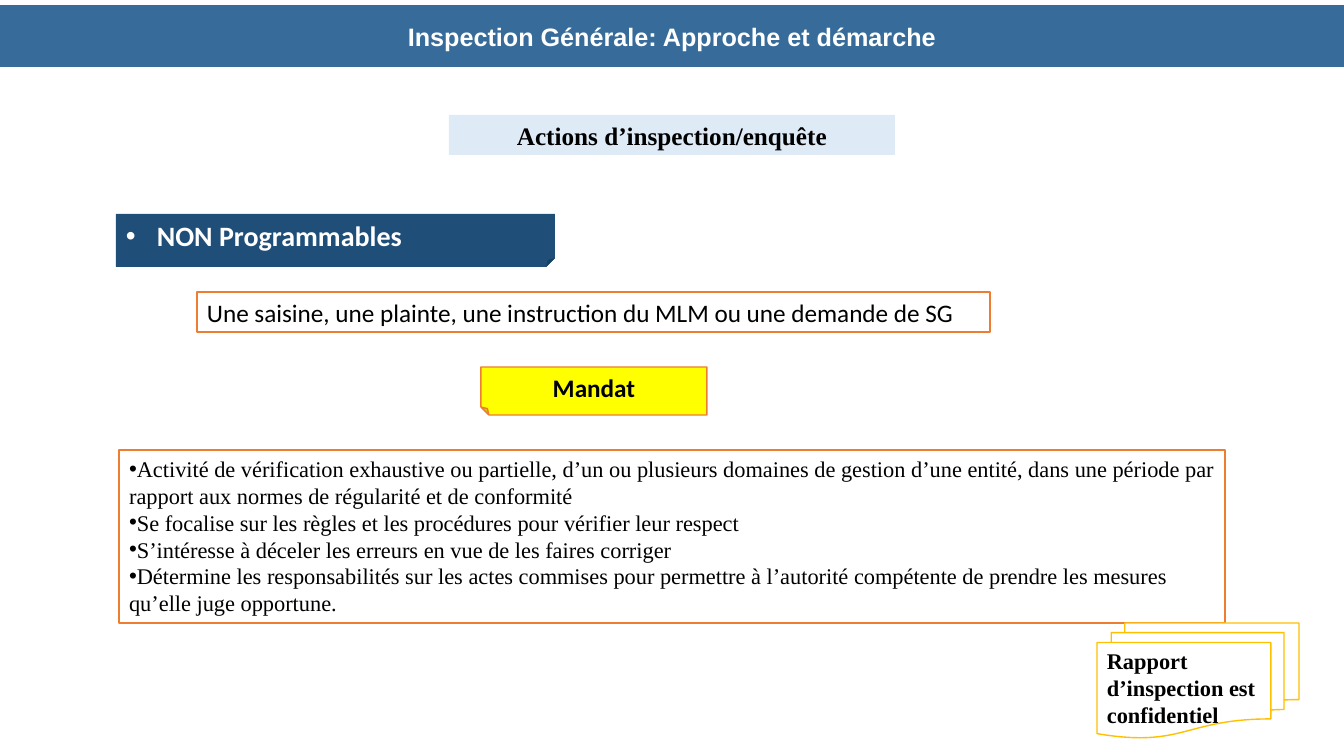
from pptx import Presentation
from pptx import util as u
from pptx.dml.color import RGBColor
from pptx.enum import shapes, text
from pptx.oxml.xmlchemy import OxmlElement

# Content: boxes are left, top, width, height in px
PX_PER_INCH = 100.8
SLIDE = (1344, 756)
SERIF, SANS = "Times New Roman", "Calibri"
BLACK, WHITE, ORANGE = "000000", "FFFFFF", "ED7D31"

TITLE = dict(box=(0, 5, 1344, 62), fill="366B9A", lines=["Inspection Générale: Approche et démarche"],
             size=18, font="Arial", color=WHITE, bold=True, center=True)
DETAILS = dict(box=(119, 450, 1106, 173), fill=WHITE, line=ORANGE, size=16, font=SERIF, bullet=(0, 0), lines=[
    "Activité de vérification exhaustive ou partielle, d’un ou plusieurs domaines de gestion d’une entité, "
    "dans une période par rapport aux normes de régularité et de conformité",
    "Se focalise sur les règles et les procédures pour vérifier leur respect",
    "S’intéresse à déceler les erreurs en vue de les faires corriger",
    "Détermine les responsabilités sur les actes commises pour permettre à l’autorité compétente de prendre "
    "les mesures qu’elle juge opportune.",
])
KIND = shapes.MSO_SHAPE
BOXES = [
    (KIND.FOLDED_CORNER, dict(box=(116, 214, 439, 53), fill="1F4E79", lines=["NON Programmables"],
                              size=20, font=SANS, color=WHITE, bold=True, bullet=(31, -31))),
    (KIND.RECTANGLE, dict(box=(449, 115, 446, 40), fill="DEEBF7", lines=["Actions d’inspection/enquête"],
                          size=18, font=SERIF, bold=True, center=True)),
    (KIND.RECTANGLE, dict(box=(197, 292, 793, 40), fill=WHITE, line=ORANGE, size=18, font=SANS,
                          lines=["Une saisine, une plainte, une instruction du MLM ou une demande de SG"])),
    (KIND.FOLDED_CORNER, dict(box=(481, 367, 226, 48), fill="FFFF00", line=ORANGE, lines=["Mandat"],
                              size=18, font=SANS, bold=True, center=True, flip=True)),
    (KIND.FLOWCHART_MULTIDOCUMENT, dict(box=(1097, 623, 202, 115), fill=WHITE, line="FFC000", size=16,
                                        font=SERIF, bold=True, lines=["Rapport d’inspection est confidentiel"])),
]


def px(n):
    return u.Emu(round(n * 914400 / PX_PER_INCH))


def rgb(value):
    return RGBColor.from_string(value)


def set_bullet(p, margin, indent):
    pPr = p._p.get_or_add_pPr()
    pPr.set("marL", str(px(margin)))
    pPr.set("indent", str(px(indent)))
    font = OxmlElement("a:buFont")
    font.set("typeface", "Arial")
    char = OxmlElement("a:buChar")
    char.set("char", "•")
    pPr.extend([font, char])


def dress(sp, box, fill, lines, size, font, line=None, color=BLACK, bold=False, center=False,
          bullet=None, flip=False, anchor=text.MSO_ANCHOR.TOP):
    # Place and colour
    sp.left, sp.top, sp.width, sp.height = map(px, box)
    sp.fill.solid()
    sp.fill.fore_color.rgb = rgb(fill)
    if line:
        sp.line.color.rgb = rgb(line)
        sp.line.width = u.Pt(1)
    else:
        sp.line.fill.background()
    if flip:
        sp._element.spPr.xfrm.set("flipH", "1")

    # Text
    tf = sp.text_frame
    tf.word_wrap = True
    tf.auto_size = text.MSO_AUTO_SIZE.NONE
    tf.vertical_anchor = anchor
    for i, words in enumerate(lines):
        p = tf.add_paragraph() if i else tf.paragraphs[0]
        p.alignment = text.PP_ALIGN.CENTER if center else text.PP_ALIGN.LEFT
        p.space_before = u.Pt(0)
        if bullet:
            set_bullet(p, *bullet)
        r = p.add_run()
        r.text = words
        r.font.name, r.font.size, r.font.bold = font, u.Pt(size), bold
        r.font.color.rgb = rgb(color)


def main():
    prs = Presentation()
    prs.slide_width, prs.slide_height = map(px, SLIDE)
    s = prs.slides.add_slide(prs.slide_layouts[1])

    # Title band and list
    dress(s.shapes.title, anchor=text.MSO_ANCHOR.MIDDLE, **TITLE)
    dress(s.placeholders[1], **DETAILS)

    # Labels and notes
    for kind, look in BOXES:
        sp = s.shapes.add_shape(kind, 0, 0, 0, 0)
        sp.shadow.inherit = False
        dress(sp, **look)

    prs.save("out.pptx")


if __name__ == "__main__":
    main()
